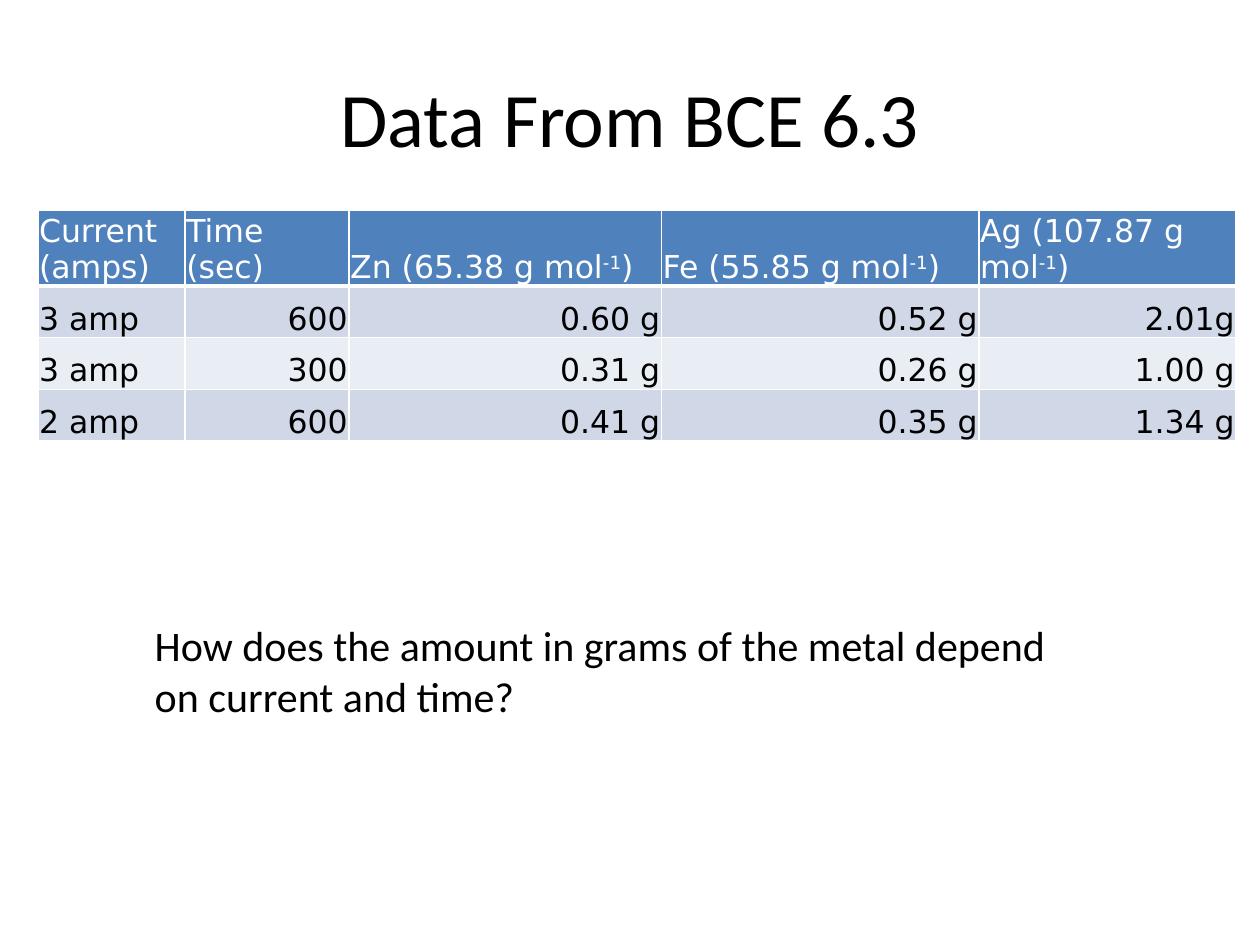
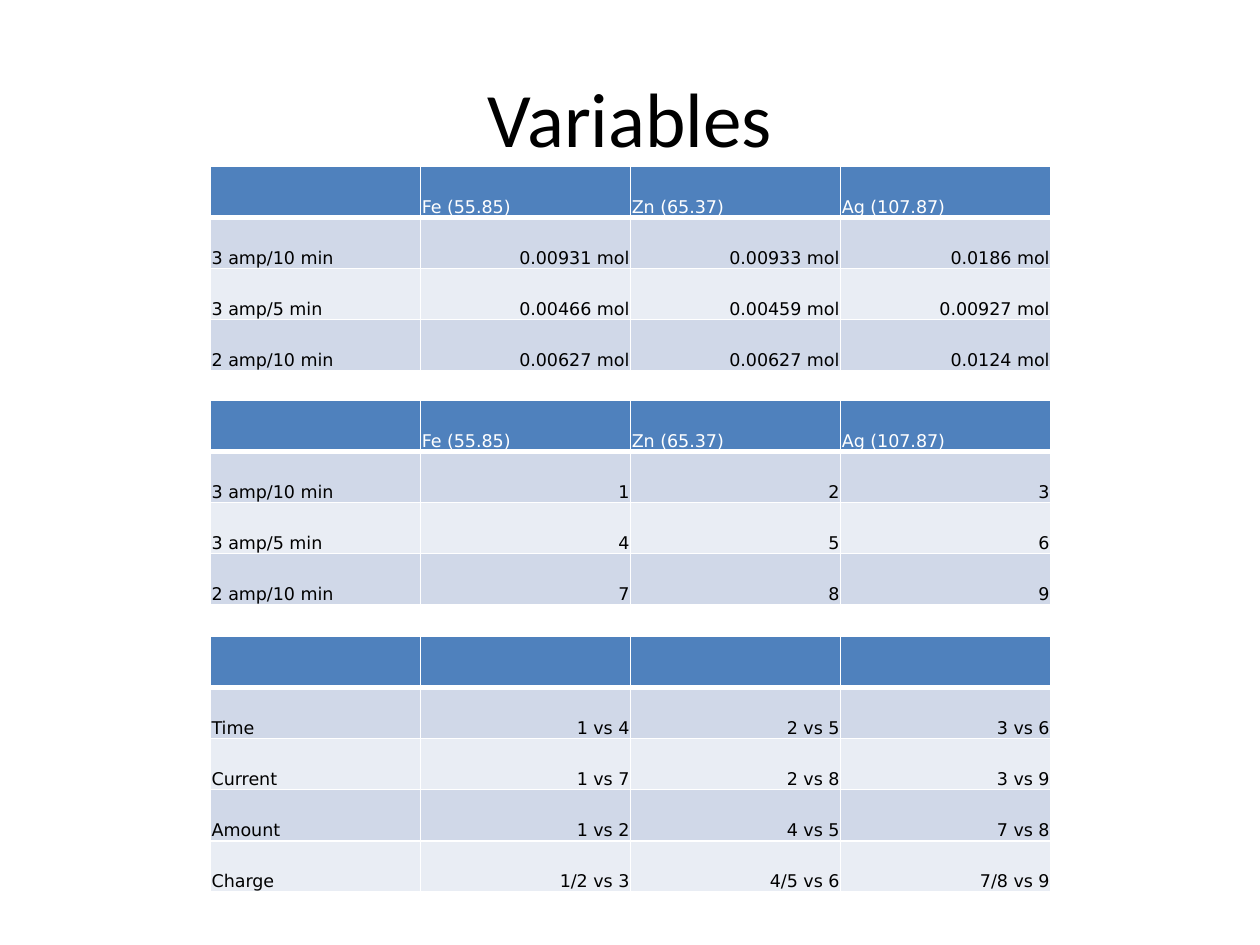
from pptx import Presentation
from pptx import util as u
from pptx.dml.color import RGBColor
from pptx.enum import text
from pptx.oxml import xmlchemy, parse_xml
from pptx.oxml.ns import nsdecls

BLACK = RGBColor(0x00, 0x00, 0x00)
WHITE = RGBColor(0xFF, 0xFF, 0xFF)
HEADER_BLUE = RGBColor(0x4F, 0x81, 0xBD)
BANDS = (RGBColor(0xD0, 0xD8, 0xE8), RGBColor(0xE9, 0xED, 0xF4))

BODY_FONT = "Calibri"
TABLE_FONT = "DejaVu Sans"
LEFT, CENTER, RIGHT = text.PP_ALIGN.LEFT, text.PP_ALIGN.CENTER, text.PP_ALIGN.RIGHT
TITLE_BOX = (0.5, 0.3, 9, 1.25)
THIN, THICK = 1, 3

MASS_ROWS = [
    ["Current (amps)", "Time (sec)", "Zn (65.38 g mol^-1^)",
     "Fe (55.85 g mol^-1^)", "Ag (107.87 g mol^-1^)"],
    ["3 amp", "600", "0.60 g", "0.52 g", "2.01g"],
    ["3 amp", "300", "0.31 g", "0.26 g", "1.00 g"],
    ["2 amp", "600", "0.41 g", "0.35 g", "1.34 g"],
]
METALS = ["", "Fe (55.85)", "Zn (65.37)", "Ag (107.87)"]
MOLE_ROWS = [
    METALS,
    ["3 amp/10 min", "0.00931 mol", "0.00933 mol", "0.0186 mol"],
    ["3 amp/5 min", "0.00466 mol", "0.00459 mol", "0.00927 mol"],
    ["2 amp/10 min", "0.00627 mol", "0.00627 mol", "0.0124 mol"],
]
NUMBER_ROWS = [
    METALS,
    ["3 amp/10 min", "1", "2", "3"],
    ["3 amp/5 min", "4", "5", "6"],
    ["2 amp/10 min", "7", "8", "9"],
]
COMPARISON_ROWS = [
    ["", "", "", ""],
    ["Time", "1 vs 4", "2 vs 5", "3 vs 6"],
    ["Current", "1 vs 7", "2 vs 8", "3 vs 9"],
    ["Amount", "1 vs 2", "4 vs 5", "7 vs 8"],
    ["Charge", "1/2 vs 3", "4/5 vs 6", "7/8 vs 9"],
]


def write_text(frame, lines, size, font=BODY_FONT, color=BLACK, align=LEFT):
    """Write lines as paragraphs, raising the parts enclosed in carets."""
    for index, line in enumerate(lines):
        paragraph = frame.paragraphs[0] if index == 0 else frame.add_paragraph()
        paragraph.alignment = align
        paragraph.font.size = u.Pt(size)
        for part_index, part in enumerate(line.split("^")):
            if not part:
                continue
            run = paragraph.add_run()
            run.text = part
            run.font.name = font
            run.font.size = u.Pt(size)
            run.font.bold = False
            run.font.color.rgb = color
            if part_index % 2:
                run.font._element.set("baseline", "30000")


def add_titled_slide(presentation, title):
    """Add a title-only slide with its title placed and formatted."""
    slide = presentation.slides.add_slide(presentation.slide_layouts[5])
    shape = slide.shapes.title
    shape.left, shape.top, shape.width, shape.height = map(u.Inches, TITLE_BOX)
    shape.text_frame.vertical_anchor = text.MSO_ANCHOR.MIDDLE
    write_text(shape.text_frame, [title], 44, align=CENTER)
    return slide


def set_borders(cell, top, bottom):
    """Draw white borders, with the top and bottom widths in points."""
    properties = cell._tc.get_or_add_tcPr()
    for side, width in zip("LRTB", (THIN, THIN, top, bottom)):
        properties.append(parse_xml(
            f'<a:ln{side} {nsdecls("a")} w="{u.Pt(width)}"><a:solidFill>'
            f'<a:srgbClr val="{WHITE}"/></a:solidFill></a:ln{side}>'))


def format_cell(cell, value, row, column, size):
    """Fill one cell and align it by its place in the table."""
    set_borders(cell, THICK if row == 1 else THIN, THICK if row == 0 else THIN)
    cell.fill.solid()
    cell.fill.fore_color.rgb = BANDS[(row - 1) % 2] if row else HEADER_BLUE
    cell.vertical_anchor = text.MSO_ANCHOR.BOTTOM
    cell.margin_left = cell.margin_right = cell.margin_top = u.Inches(0.01)
    cell.margin_bottom = 0
    write_text(cell.text_frame, [value], size, font=TABLE_FONT,
               color=BLACK if row else WHITE,
               align=RIGHT if row and column else LEFT)


def add_data_table(slide, box, rows, size, column_widths=None, header_height=None):
    """Add a banded table with a blue header row to the given box."""
    left, top, width, height = box
    column_count = len(rows[0])
    table = slide.shapes.add_table(len(rows), column_count, *map(u.Inches, box)).table
    header_height = header_height or height / len(rows)
    body_height = (height - header_height) / (len(rows) - 1)
    column_widths = column_widths or [width / column_count] * column_count
    for column, column_width in zip(table.columns, column_widths):
        column.width = u.Inches(column_width)
    for row_index, values in enumerate(rows):
        table.rows[row_index].height = u.Inches(body_height if row_index else header_height)
        for column_index, value in enumerate(values):
            format_cell(table.cell(row_index, column_index), value,
                        row_index, column_index, size)


def add_question(slide, box, lines):
    """Add the discussion question as an unwrapped text box."""
    frame = slide.shapes.add_textbox(*map(u.Inches, box)).text_frame
    frame.word_wrap = False
    frame.auto_size = text.MSO_AUTO_SIZE.SHAPE_TO_FIT_TEXT
    write_text(frame, lines, 24)


def build_data_slide(presentation):
    """Build the slide with the measured masses and the question."""
    slide = add_titled_slide(presentation, "Data From BCE 6.3")
    add_data_table(slide, (0.3, 1.67, 9.51, 1.83), MASS_ROWS, 18,
                   column_widths=(1.17, 1.3, 2.48, 2.52, 2.04), header_height=0.6)
    add_question(slide, (1.13, 4.87, 7.36, 0.91),
                 ["How does the amount in grams of the metal depend",
                  "on current and time?"])


def build_variables_slide(presentation):
    """Build the slide with the three stacked tables."""
    slide = add_titled_slide(presentation, "Variables")
    for top, height, rows in ((1.32, 1.62, MOLE_ROWS), (3.18, 1.62, NUMBER_ROWS),
                              (5.05, 2.03, COMPARISON_ROWS)):
        add_data_table(slide, (1.67, top, 6.67, height), rows, 10)


def main():
    """Build and save the presentation."""
    presentation = Presentation()
    presentation.slide_width = u.Inches(10)
    presentation.slide_height = u.Inches(7.5)
    build_data_slide(presentation)
    build_variables_slide(presentation)
    presentation.save("out.pptx")


if __name__ == "__main__":
    main()
